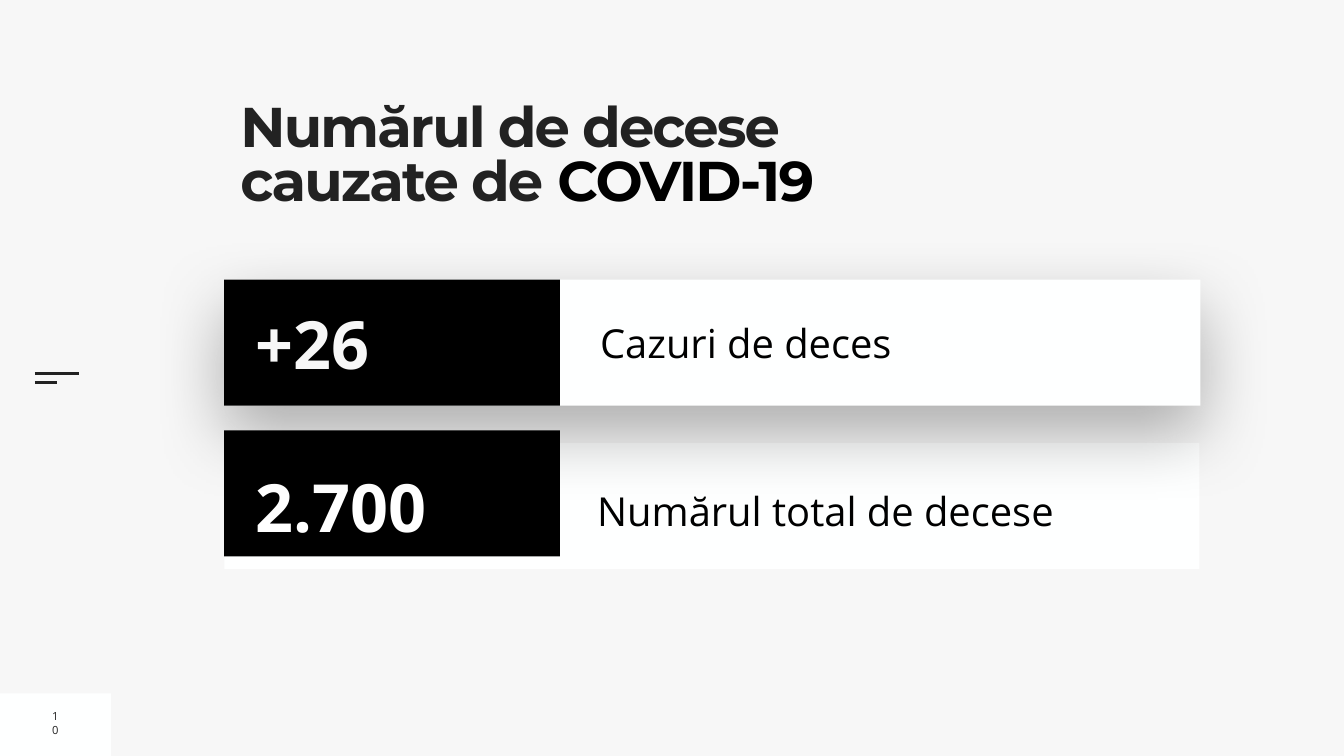
from lxml.etree import SubElement
from pptx import Presentation
from pptx.dml.color import RGBColor
from pptx.enum.shapes import MSO_CONNECTOR, MSO_SHAPE
from pptx.enum.text import MSO_ANCHOR, MSO_AUTO_SIZE, PP_ALIGN
from pptx.oxml.ns import qn
from pptx.util import Emu, Pt

PX = 9144  # EMU per px, 100 px to the inch
PAPER = RGBColor(0xF7, 0xF7, 0xF7)
WHITE = RGBColor(0xFE, 0xFF, 0xFF)
PURE_WHITE = RGBColor(0xFF, 0xFF, 0xFF)
BLACK = RGBColor(0, 0, 0)
INK = RGBColor(0x22, 0x22, 0x22)


def px(n):
    return Emu(n * PX)


class Deck:
    heading_font = "Montserrat"
    body_font = "Open Sans"

    def __init__(self, width, height):
        self.prs = Presentation()
        self.prs.slide_width, self.prs.slide_height = px(width), px(height)

    def add_slide(self):
        self.s = self.prs.slides.add_slide(self.prs.slide_layouts[5])
        fill = self.s.background.fill
        fill.solid()
        fill.fore_color.rgb = PAPER

    def run(self, p, text, size, color, font, bold=False):
        r = p.add_run()
        r.text = text
        r.font.size, r.font.name, r.font.bold = Pt(size), font, bold
        r.font.color.rgb = color
        return r

    def frame(self, sp, anchor, inset):
        tf = sp.text_frame
        tf.word_wrap, tf.auto_size = True, MSO_AUTO_SIZE.NONE
        tf.vertical_anchor = anchor
        tf.margin_left = tf.margin_right = px(inset)
        tf.margin_top = tf.margin_bottom = px(inset)
        return tf.paragraphs[0]

    def title(self, x, y, w, h, parts):
        """Fill the title placeholder with (text, colour) parts."""
        sp = self.s.shapes.title
        sp.left, sp.top, sp.width, sp.height = map(px, (x, y, w, h))
        p = self.frame(sp, MSO_ANCHOR.TOP, 0)
        p.alignment, p.line_spacing = PP_ALIGN.LEFT, 0.8
        for text, color in parts:
            r = self.run(p, text, 80, color, self.heading_font, True)
            r.font._element.set("spc", "-270")

    def text(self, x, y, w, h, text, size, color, bold=False, inset=10,
             align=PP_ALIGN.LEFT):
        sp = self.s.shapes.add_textbox(*map(px, (x, y, w, h)))
        p = self.frame(sp, MSO_ANCHOR.MIDDLE, inset)
        p.alignment = align
        self.run(p, text, size, color, self.body_font, bold)
        return p

    def rect(self, x, y, w, h, color, shadow=False):
        sp = self.s.shapes.add_shape(MSO_SHAPE.RECTANGLE, *map(px, (x, y, w, h)))
        sp.fill.solid()
        sp.fill.fore_color.rgb = color
        sp.line.fill.background()
        sp.shadow.inherit = False
        if shadow:
            effects = sp._element.spPr.find(qn("a:effectLst"))
            outer = SubElement(effects, qn("a:outerShdw"), blurRad=str(Pt(100)),
                               dist=str(Pt(40)), dir="5400000", rotWithShape="0")
            tint = SubElement(outer, qn("a:srgbClr"), val=str(BLACK))
            SubElement(tint, qn("a:alpha"), val="30000")

    def rule(self, x, y, w):
        c = self.s.shapes.add_connector(
            MSO_CONNECTOR.STRAIGHT, px(x), px(y), px(x + w), px(y))
        c.line.color.rgb, c.line.width = INK, Pt(3)
        SubElement(c._element.spPr, qn("a:effectLst"))


def main():
    deck = Deck(2667, 1500)
    deck.add_slide()

    deck.rect(0, 1376, 220, 124, WHITE)
    deck.text(93, 1409, 34, 51, "10", 16, INK, align=PP_ALIGN.CENTER)
    deck.rule(69, 741, 88)
    deck.rule(69, 759, 44)

    deck.title(477, 207, 1301, 273, [("Numărul de decese cauzate de ", INK),
                                     ("COVID-19", BLACK)])

    left, label_w, bar_h = 445, 666, 250
    deck.rect(left, 879, 1935, bar_h, WHITE)
    p = deck.text(1185, 943, 1158, 112, "Numărul total de decese", 57, BLACK, inset=0)
    p.line_spacing, p.space_before = 1.3, Pt(20)
    deck.rect(left, 854, label_w, bar_h, BLACK)
    deck.text(498, 914, 603, 180, "2.700", 95, PURE_WHITE, bold=True)

    deck.rect(left, 555, 1937, bar_h, WHITE, shadow=True)
    deck.text(1181, 622, 1176, 116, "Cazuri de deces", 57, BLACK)
    deck.rect(left, 555, label_w, bar_h, BLACK)
    deck.text(498, 590, 603, 180, "+26", 95, PAPER, bold=True)

    deck.prs.save("out.pptx")


if __name__ == "__main__":
    main()
